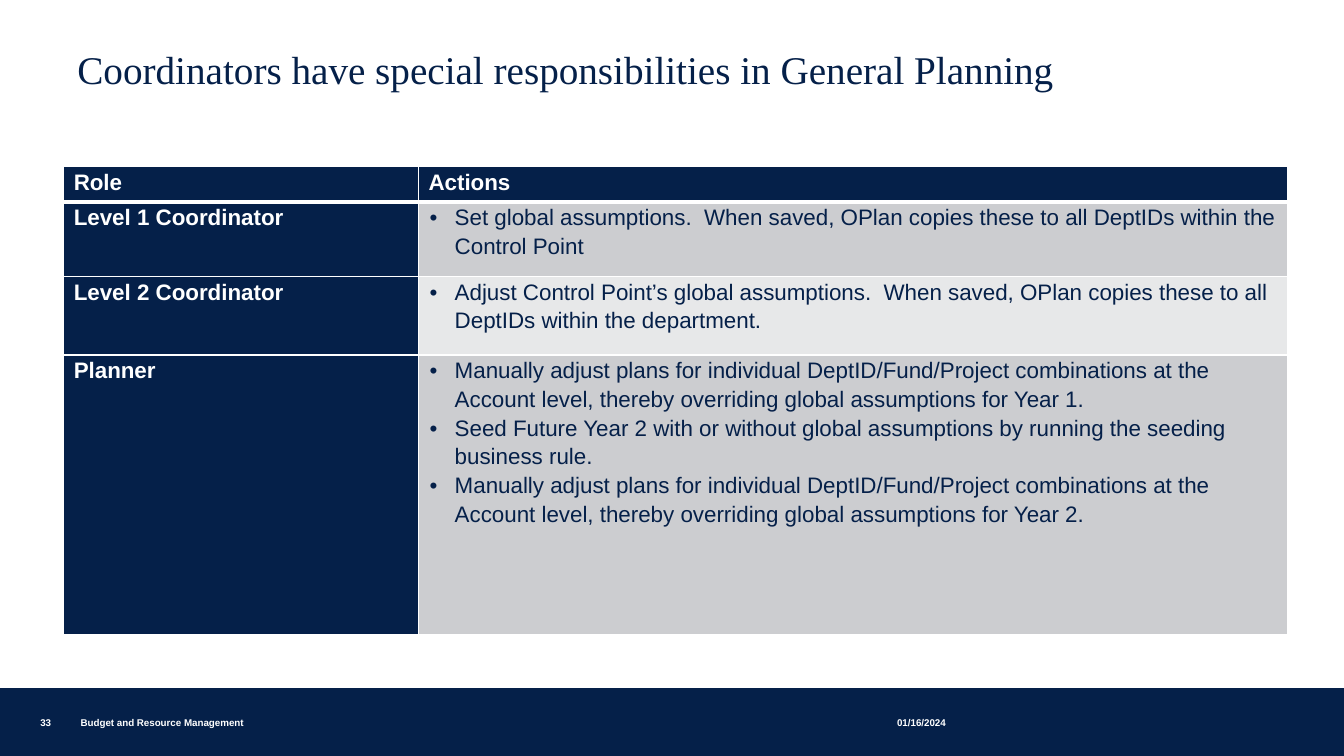
from lxml.etree import SubElement
from pptx import Presentation
from pptx.dml.color import RGBColor
from pptx.enum.shapes import MSO_SHAPE
from pptx.enum.text import MSO_ANCHOR, PP_ALIGN
from pptx.oxml.ns import qn
from pptx.util import Pt

COLORS = {"navy": "052049", "white": "FFFFFF", "grey": "CCCDD0", "pale": "E7E8E9"}

HEADINGS = ["Role", "Actions"]
ROLES = [
    ("Level 1 Coordinator", [
        "Set global assumptions.  When saved, OPlan copies these to all DeptIDs within the Control Point",
    ]),
    ("Level 2 Coordinator", [
        "Adjust Control Point’s global assumptions.  When saved, OPlan copies these to all DeptIDs within the department.",
    ]),
    ("Planner", [
        "Manually adjust plans for individual DeptID/Fund/Project combinations at the Account level, thereby overriding global assumptions for Year 1.",
        "Seed Future Year 2 with or without global assumptions by running the seeding business rule.",
        "Manually adjust plans for individual DeptID/Fund/Project combinations at the Account level, thereby overriding global assumptions for Year 2.",
    ]),
]
COLUMN_WIDTHS = [253.44, 620.64]
ROW_HEIGHTS = [25.2, 53.28, 56.16, 199.44]


def rgb(name):
    return RGBColor.from_string(COLORS[name])


def style_runs(p, size, color, font="Arial", bold=False):
    for r in p.runs:
        r.font.name = font
        r.font.size = Pt(size)
        r.font.bold = bold
        r.font.color.rgb = rgb(color)


def add_text(s, box, text, size, color, font="Arial", bold=False,
             anchor=MSO_ANCHOR.BOTTOM, inset=0, spacing=1.0):
    tf = s.shapes.add_textbox(*map(Pt, box)).text_frame
    tf.word_wrap = True
    tf.vertical_anchor = anchor
    tf.margin_left = tf.margin_right = Pt(inset)
    tf.margin_top = tf.margin_bottom = Pt(inset / 2)
    tf.text = text
    p = tf.paragraphs[0]
    p.line_spacing = spacing
    style_runs(p, size, color, font, bold)


def add_title(s, box):
    add_text(s, box, "Coordinators have special responsibilities in General Planning",
             28, "navy", "Times New Roman", anchor=MSO_ANCHOR.MIDDLE,
             inset=7.2, spacing=0.85)


def set_borders(cell, top, bottom):
    tcPr = cell._tc.get_or_add_tcPr()
    for side, width in (("L", 1), ("R", 1), ("T", top), ("B", bottom)):
        ln = SubElement(tcPr, qn(f"a:ln{side}"), w=str(Pt(width)))
        fill = SubElement(ln, qn("a:solidFill"))
        SubElement(fill, qn("a:srgbClr"), val=COLORS["white"])


def add_bullet(p):
    pPr = p._p.get_or_add_pPr()
    pPr.set("marL", str(Pt(18.72)))
    pPr.set("indent", str(Pt(-18)))
    SubElement(pPr, qn("a:buFont"), typeface="Arial")
    SubElement(pPr, qn("a:buChar"), char="•")


def fill_cell(cell, lines, fill, color, bold, bulleted, top, bottom):
    set_borders(cell, top, bottom)
    cell.fill.solid()
    cell.fill.fore_color.rgb = rgb(fill)
    cell.margin_left = cell.margin_right = Pt(7.2)
    cell.margin_top = cell.margin_bottom = 0
    cell.text_frame.text = "\n".join(lines)
    for p in cell.text_frame.paragraphs:
        if bulleted:
            add_bullet(p)
        p.alignment = PP_ALIGN.LEFT
        p.line_spacing = 1.15
        style_runs(p, 16, color, bold=bold)


def add_roles_table(s, box):
    rows = [([HEADINGS[0]], [HEADINGS[1]])]
    rows += [([role], actions) for role, actions in ROLES]
    table = s.shapes.add_table(len(rows), len(HEADINGS), *map(Pt, box)).table
    for column, width in zip(table.columns, COLUMN_WIDTHS):
        column.width = Pt(width)
    for row, height in zip(table.rows, ROW_HEIGHTS):
        row.height = Pt(height)
    for i, row in enumerate(rows):
        for j, lines in enumerate(row):
            action = i > 0 and j == 1
            band = "grey" if i % 2 else "pale"
            fill_cell(table.cell(i, j), lines,
                      fill=band if action else "navy",
                      color="navy" if action else "white",
                      bold=not action, bulleted=action,
                      top=3 if i == 1 else 1, bottom=3 if i == 0 else 1)


def add_footer(s, box):
    left, top, width, height = box
    bar = s.shapes.add_shape(MSO_SHAPE.RECTANGLE, *map(Pt, box))
    bar.shadow.inherit = False
    bar.fill.solid()
    bar.fill.fore_color.rgb = rgb("navy")
    bar.line.color.rgb = rgb("navy")
    bar.line.width = Pt(1.5)
    for x, w, text in ((28.8, 26, "33"),
                       (57.6, 453, "Budget and Resource Management"),
                       (640.8, 97, "01/16/2024")):
        add_text(s, (left + x, top + 16, w, 12), text, 7, "white", bold=True)


def main():
    prs = Presentation()
    prs.slide_width, prs.slide_height = Pt(960), Pt(540)
    s = prs.slides.add_slide(prs.slide_layouts[6])
    add_footer(s, (0, 492.5, 960, 47.5))
    add_title(s, (48.24, 33.84, 849.6, 36))
    add_roles_table(s, (45.5, 119, 874.08, 334.08))
    prs.save("out.pptx")


if __name__ == "__main__":
    main()
